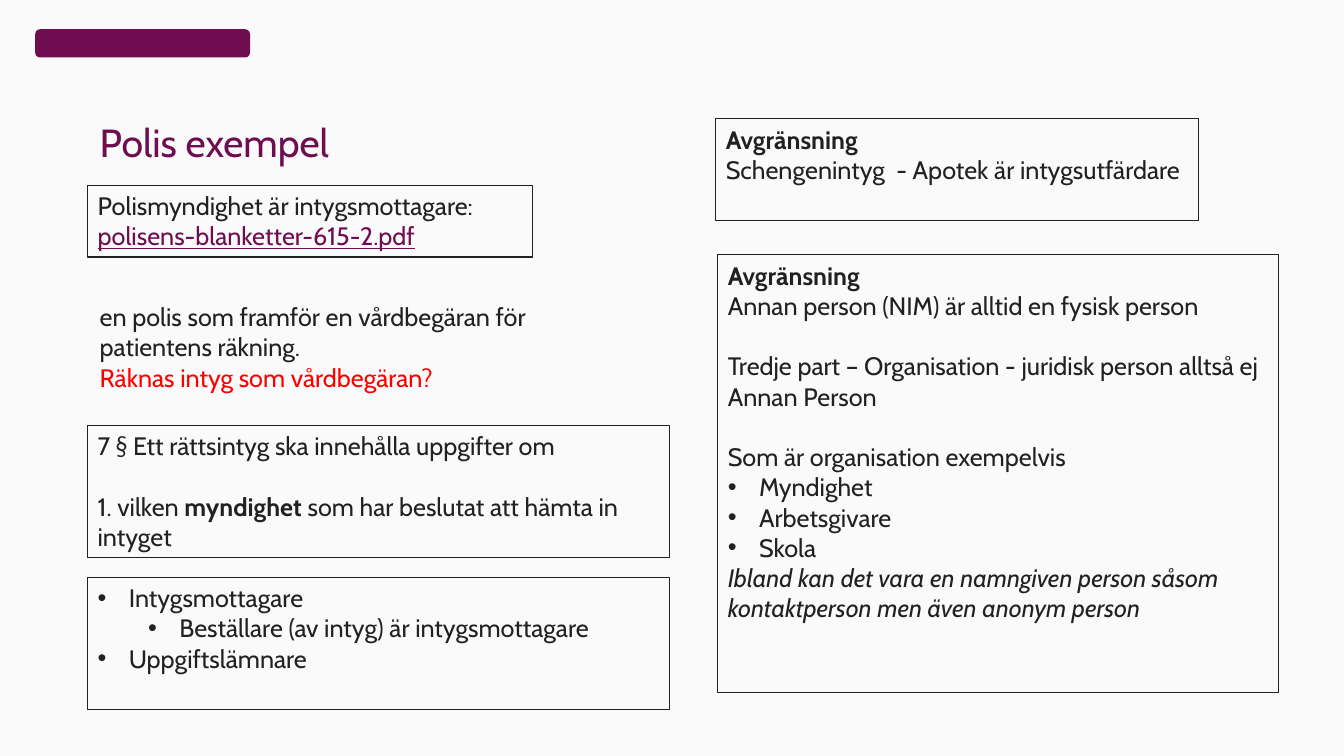
"""Build the slide about police certificates and their delimitations."""
from dataclasses import dataclass

from lxml import etree
from pptx import Presentation
from pptx import util as u
from pptx.dml.color import RGBColor
from pptx.enum import shapes, text
from pptx.oxml import ns

INK, PLUM, RED, PAPER = "212121", "6E0E50", "FF0000", "FAFAFA"
FONT = "Cabin"
HANGING = 0.31
LEVEL_STEP = 0.5
BLANK_LINE = 21.6


@dataclass(frozen=True)
class Span:
    text: str
    bold: bool = False


@dataclass(frozen=True)
class Para:
    spans: tuple[Span, ...]
    color: str = INK
    size: float = 18
    italic: bool = False
    underline: bool = False
    bullet_level: int | None = None
    gap_before: float = 0


@dataclass(frozen=True)
class Box:
    left: float
    top: float
    width: float
    height: float
    paras: tuple[Para, ...]
    framed: bool = True


def line(words: str, bold: bool = False, **style) -> Para:
    return Para((Span(words, bold),), **style)


def rgb(color: str) -> RGBColor:
    return RGBColor.from_string(color)


BOXES = (
    Box(7.12, 2.53, 5.56, 4.34, (
        line("Avgränsning", bold=True),
        line("Annan person (NIM) är alltid en fysisk person"),
        line("Tredje part – Organisation - juridisk person alltså ej Annan Person",
             gap_before=BLANK_LINE),
        line("Som är organisation exempelvis", gap_before=BLANK_LINE),
        line("Myndighet", bullet_level=0),
        line("Arbetsgivare", bullet_level=0),
        line("Skola", bullet_level=0),
        line("Ibland kan det vara en namngiven person såsom kontaktperson "
             "men även anonym person", italic=True),
    )),
    Box(0.89, 2.94, 5.34, 1.01, (
        line("en polis som framför en vårdbegäran för patientens räkning."),
        line("Räknas intyg som vårdbegäran?", color=RED),
    ), framed=False),
    Box(0.87, 1.84, 4.41, 0.71, (
        line("Polismyndighet är intygsmottagare:"),
        line("polisens-blanketter-615-2.pdf", color=PLUM, underline=True),
    )),
    Box(0.87, 4.22, 5.77, 1.31, (
        line("7 § Ett rättsintyg ska innehålla uppgifter om"),
        Para((Span("1. vilken "), Span("myndighet", bold=True),
              Span(" som har beslutat att hämta in intyget")),
             gap_before=BLANK_LINE),
    )),
    Box(0.87, 5.73, 5.77, 1.31, (
        line("Intygsmottagare", bullet_level=0),
        line("Beställare (av intyg) är intygsmottagare", bullet_level=1),
        line("Uppgiftslämnare", bullet_level=0),
    )),
    Box(0.89, 1.12, 4.04, 0.57, (
        line("Polis exempel", color=PLUM, size=28),
    ), framed=False),
    Box(7.1, 1.18, 4.79, 1.01, (
        line("Avgränsning", bold=True),
        line("Schengenintyg  - Apotek är intygsutfärdare"),
    )),
)


def add_bullet(paragraph, level: int) -> None:
    paragraph.level = level
    properties = paragraph._p.get_or_add_pPr()
    properties.set("marL", str(u.Inches(HANGING + level * LEVEL_STEP)))
    properties.set("indent", str(u.Inches(-HANGING)))
    etree.SubElement(properties, ns.qn("a:buFont"), typeface="Arial")
    etree.SubElement(properties, ns.qn("a:buChar"), char="•")


def write_para(paragraph, para: Para) -> None:
    if para.bullet_level is not None:
        add_bullet(paragraph, para.bullet_level)
    paragraph.alignment = text.PP_ALIGN.LEFT
    paragraph.space_before = u.Pt(para.gap_before)
    font = paragraph.font
    font.name, font.size = FONT, u.Pt(para.size)
    font.italic, font.underline = para.italic, para.underline
    font.color.rgb = rgb(para.color)
    mixed = len({span.bold for span in para.spans}) > 1
    if not mixed:
        font.bold = para.spans[0].bold
    for span in para.spans:
        run = paragraph.add_run()
        run.text = span.text
        if mixed:
            run.font.bold = span.bold


def add_box(page, box: Box) -> None:
    place = [u.Inches(n) for n in (box.left, box.top, box.width, box.height)]
    if box.framed:
        shape = page.shapes.add_shape(shapes.MSO_SHAPE.RECTANGLE, *place)
        shape.shadow.inherit = False
        shape.fill.background()
        shape.line.color.rgb = rgb(INK)
        shape.line.width = u.Pt(0.75)
    else:
        shape = page.shapes.add_textbox(*place)
    frame = shape.text_frame
    frame.word_wrap = True
    frame.vertical_anchor = text.MSO_ANCHOR.TOP
    for index, para in enumerate(box.paras):
        write_para(frame.add_paragraph() if index else frame.paragraphs[0], para)


def add_emblem(page) -> None:
    emblem = page.shapes.add_shape(
        shapes.MSO_SHAPE.ROUNDED_RECTANGLE,
        u.Inches(0.35), u.Inches(0.29), u.Inches(2.13), u.Inches(0.28))
    emblem.shadow.inherit = False
    emblem.fill.solid()
    emblem.fill.fore_color.rgb = rgb(PLUM)
    emblem.line.fill.background()


def main() -> None:
    deck = Presentation()
    deck.slide_width, deck.slide_height = u.Inches(13.33), u.Inches(7.5)
    page = deck.slides.add_slide(deck.slide_layouts[6])
    page.background.fill.solid()
    page.background.fill.fore_color.rgb = rgb(PAPER)
    add_emblem(page)
    for box in BOXES:
        add_box(page, box)
    deck.save("out.pptx")


if __name__ == "__main__":
    main()
